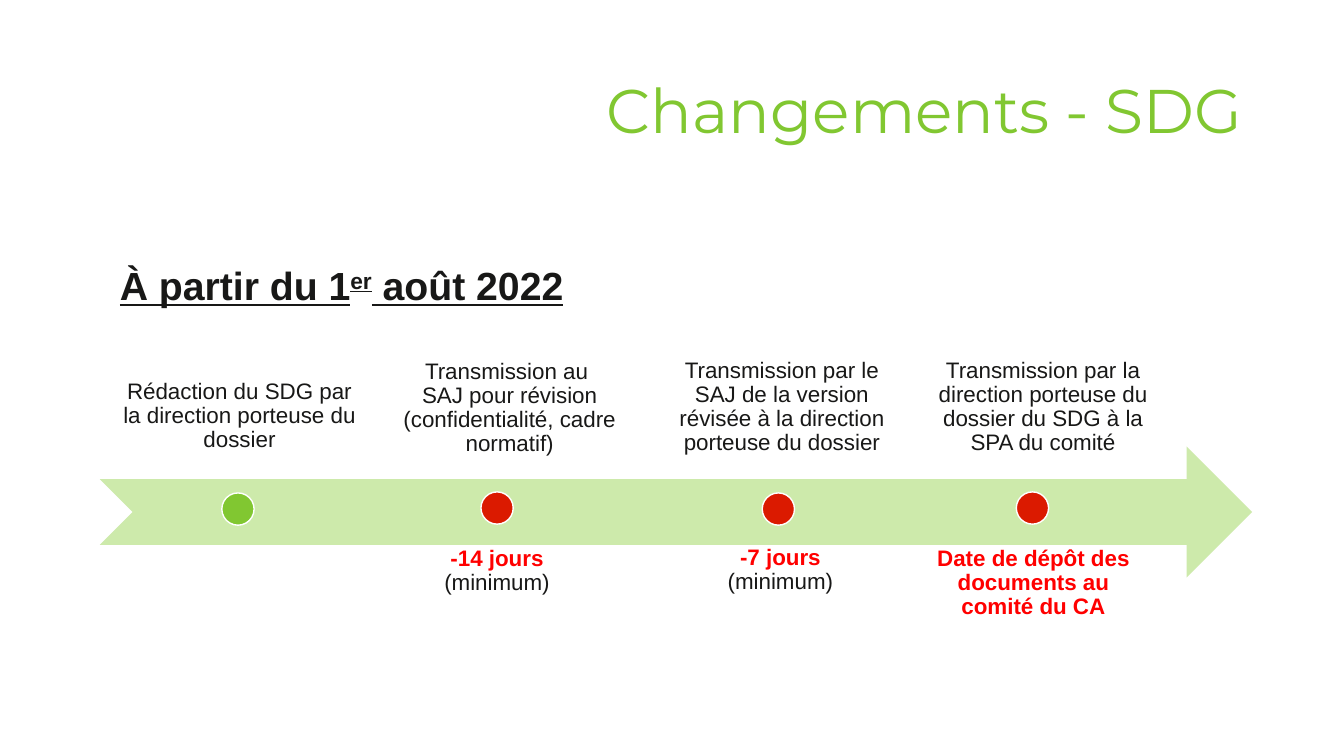
from pptx import Presentation
from pptx.dml.color import RGBColor
from pptx.enum.shapes import MSO_SHAPE
from pptx.enum.text import MSO_ANCHOR, PP_ALIGN
from pptx.util import Inches, Pt

GREEN = RGBColor(0x81, 0xC7, 0x31)
PALE_GREEN = RGBColor(0xCD, 0xEA, 0xAB)
RED = RGBColor(0xDB, 0x1A, 0x00)
DEADLINE_RED = RGBColor(0xFF, 0x00, 0x00)
DARK = RGBColor(0x18, 0x18, 0x17)
WHITE = RGBColor(0xFF, 0xFF, 0xFF)


def add_text(box, lines, size=16, font="Arial", align=PP_ALIGN.CENTER, inset=0.1):
    """Add a text box; each line is a list of (text, colour, bold) runs."""
    shape = slide.shapes.add_textbox(*map(Inches, box))
    frame = shape.text_frame
    frame.word_wrap = True
    frame.margin_left = frame.margin_right = Inches(inset)
    frame.margin_top = frame.margin_bottom = Inches(0.12 if inset > 0.1 else 0.05)
    for index, runs in enumerate(lines):
        paragraph = frame.add_paragraph() if index else frame.paragraphs[0]
        paragraph.alignment = align
        paragraph.line_spacing = 0.9
        for text, colour, bold in runs:
            run = paragraph.add_run()
            run.text = text
            run.font.size = Pt(size)
            run.font.name = font
            run.font.bold = bold
            run.font.color.rgb = colour
    return frame


def add_filled_shape(kind, box, colour):
    shape = slide.shapes.add_shape(kind, *map(Inches, box))
    shape.shadow.inherit = False
    shape.fill.solid()
    shape.fill.fore_color.rgb = colour
    shape.line.fill.background()
    return shape


presentation = Presentation()
presentation.slide_width = Inches(13.33)
presentation.slide_height = Inches(7.5)
slide = presentation.slides.add_slide(presentation.slide_layouts[6])

title = add_text((1.94, 0.4, 10.48, 1.45), [[("Changements - SDG", GREEN, False)]],
                 size=44, font="Montserrat", align=PP_ALIGN.RIGHT)
title.vertical_anchor = MSO_ANCHOR.MIDDLE

heading = add_text(
    (1.09, 2.6, 11.33, 0.6),
    [[("À partir du 1", DARK, True), ("er", DARK, True), (" août 2022", DARK, True)]],
    size=28, align=PP_ALIGN.LEFT)
heading_runs = heading.paragraphs[0].runs
for run in heading_runs:
    run.font.underline = True
heading_runs[1]._r.get_or_add_rPr().set("baseline", "30000")

add_filled_shape(MSO_SHAPE.NOTCHED_RIGHT_ARROW, (0.99, 4.43, 11.43, 1.3), PALE_GREEN)

# Marker left, top and colour for each step
markers = [(2.2, 4.89, GREEN), (4.77, 4.88, RED), (7.56, 4.89, RED), (10.08, 4.88, RED)]
for left, top, colour in markers:
    marker = add_filled_shape(MSO_SHAPE.OVAL, (left, top, 0.32, 0.32), colour)
    marker.line.color.rgb = WHITE
    marker.line.width = Pt(1)

# Box, inset and lines for each step
steps = [
    ((1.04, 3.65, 2.67, 0.86), 0.12,
     ["Rédaction du SDG par la direction porteuse du dossier"]),
    ((3.73, 3.45, 2.65, 1.1), 0.12,
     ["Transmission au ", "SAJ pour révision (confidentialité, cadre normatif)"]),
    ((6.55, 3.51, 2.41, 1.07), 0.1,
     ["Transmission par le SAJ de la version révisée à la direction porteuse du dossier"]),
    ((9.14, 3.51, 2.41, 1.07), 0.1,
     ["Transmission par la direction porteuse du dossier du SDG à la SPA du comité"]),
]
for box, inset, lines in steps:
    add_text(box, [[(line, DARK, False)] for line in lines], inset=inset)

# Box, inset, deadline and optional note below the arrow
deadlines = [
    ((3.78, 5.31, 2.3, 0.69), 0.12, "-14 jours", "(minimum)"),
    ((6.68, 5.37, 2.12, 0.59), 0.1, "-7 jours", "(minimum)"),
    ((9.1, 5.31, 2.3, 1.3), 0.12, "Date de dépôt des documents au comité du CA", None),
]
for box, inset, deadline, note in deadlines:
    lines = [[(deadline, DEADLINE_RED, True)]]
    if note:
        lines.append([(note, DARK, False)])
    add_text(box, lines, inset=inset)

presentation.save("out.pptx")
